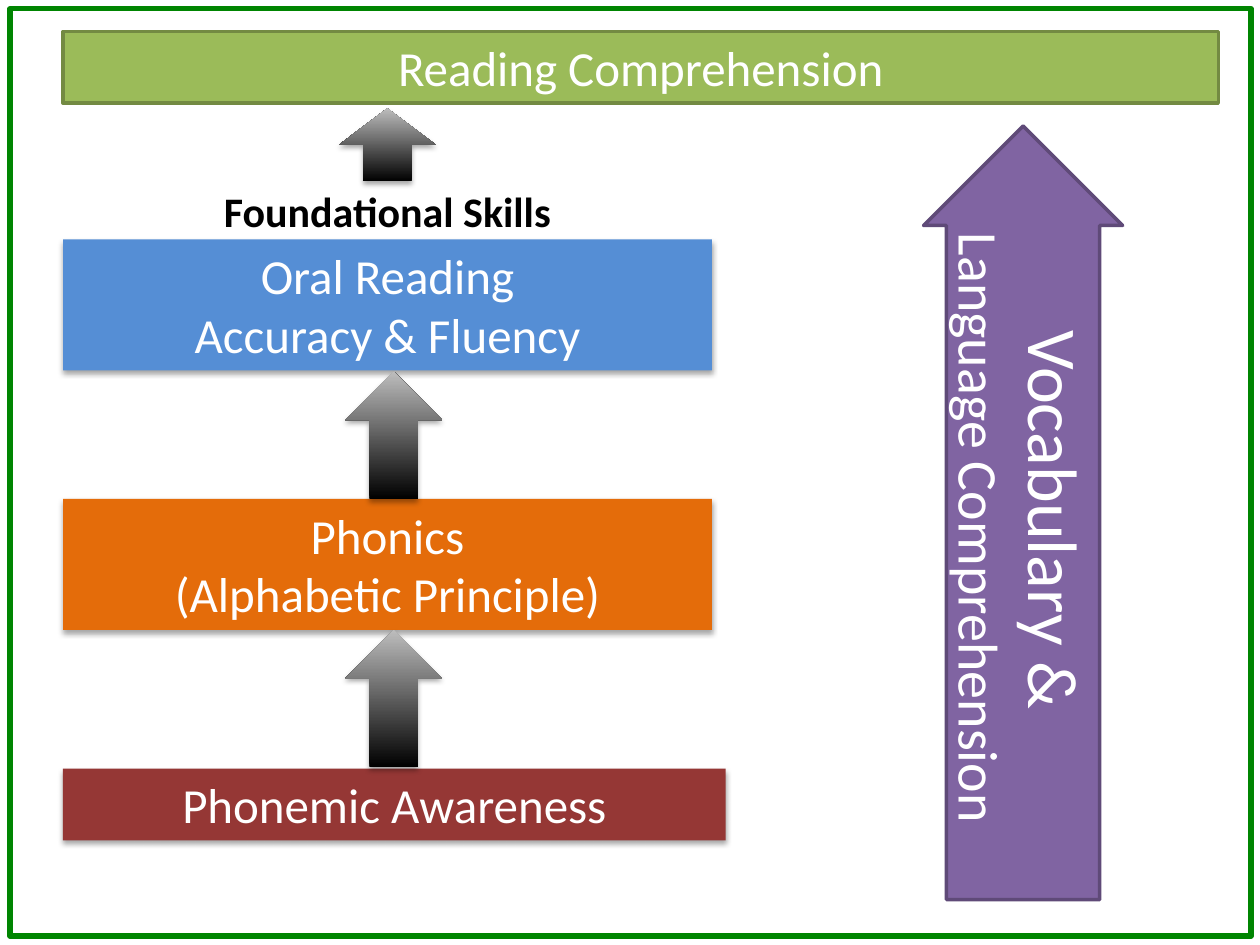
from lxml.etree import SubElement
from pptx import Presentation
from pptx.dml.color import RGBColor
from pptx.enum.shapes import MSO_SHAPE as Preset
from pptx.enum.text import MSO_ANCHOR as Anchor, MSO_AUTO_SIZE as AutoSize, PP_ALIGN as Align
from pptx.oxml.ns import qn
from pptx.util import Inches, Pt

COLUMNS, ROWS = 100, 75


def color(value):
    return RGBColor.from_string(value)


class SlideBuilder:
    font = {"name": "Calibri", "size": Pt(28), "bold": False}
    shadow = {"blurRad": Pt(3.1), "dist": Pt(1.8), "dir": 5400000, "rotWithShape": 0}

    def __init__(self, deck):
        self.width, self.height = deck.slide_width, deck.slide_height
        self.page = deck.slides.add_slide(deck.slide_layouts[6])

    def place(self, left, top, width, height):
        return (
            round(left * self.width / COLUMNS),
            round(top * self.height / ROWS),
            round(width * self.width / COLUMNS),
            round(height * self.height / ROWS),
        )

    def shape(self, preset, area, fill=None, line=None, weight=2, shaded=False):
        shape = self.page.shapes.add_shape(preset, *self.place(*area))
        shape.shadow.inherit = False
        if fill:
            shape.fill.solid()
            shape.fill.fore_color.rgb = color(fill)
        else:
            shape.fill.background()
        if line:
            shape.line.color.rgb = color(line)
            shape.line.width = Pt(weight)
        else:
            shape.line.fill.background()
        if shaded:
            self.add_shadow(shape)
        return shape

    def add_shadow(self, shape):
        effects = shape._element.spPr.find(qn("a:effectLst"))
        outer = SubElement(effects, qn("a:outerShdw"))
        for name, value in self.shadow.items():
            outer.set(name, str(int(value)))
        tint = SubElement(outer, qn("a:srgbClr"), val="000000")
        SubElement(tint, qn("a:alpha"), val="35000")

    def add_text(self, box, lines, ink="FFFFFF", frame_format=None, sizes=(), **font):
        frame = box.text_frame
        settings = {"word_wrap": True, "vertical_anchor": Anchor.TOP,
                    "auto_size": AutoSize.SHAPE_TO_FIT_TEXT, **(frame_format or {})}
        for name, value in settings.items():
            setattr(frame, name, value)
        for index, line in enumerate(lines):
            para = frame.add_paragraph() if index else frame.paragraphs[0]
            para.alignment = Align.CENTER
            span = para.add_run()
            span.text = line
            for name, value in {**self.font, **font}.items():
                setattr(span.font, name, value)
            if sizes:
                span.font.size = Pt(sizes[index])
            span.font.color.rgb = color(ink)

    def block(self, area, lines, fill, **look):
        self.add_text(self.shape(Preset.RECTANGLE, area, fill, **look), lines)

    def label(self, area, text):
        box = self.page.shapes.add_textbox(*self.place(*area))
        self.add_text(box, [text], ink="000000", size=Pt(24), bold=True)

    def step_arrow(self, left, top, height):
        arrow = self.shape(Preset.UP_ARROW, (left, top, 7.7, height), shaded=True)
        arrow.fill.gradient()
        arrow.fill.gradient_angle = 90
        for stop, value in zip(arrow.fill.gradient_stops, ("000000", "BDBDBD")):
            stop.color.rgb = color(value)

    def side_arrow(self, area, lines, sizes, fill, line):
        arrow = self.shape(Preset.UP_ARROW, area, fill, line)
        arrow.adjustments[0], arrow.adjustments[1] = 0.77, 0.5
        layout = {
            "word_wrap": False, "vertical_anchor": Anchor.MIDDLE, "auto_size": AutoSize.NONE,
            "margin_left": Inches(0.1), "margin_top": Inches(0.03),
            "margin_right": Inches(0.1), "margin_bottom": Inches(0.4),
        }
        self.add_text(arrow, lines, frame_format=layout, sizes=sizes)
        arrow.text_frame._txBody.bodyPr.set("vert", "vert")


def main():
    deck = Presentation()
    deck.slide_width, deck.slide_height = Inches(10), Inches(7.5)
    slide = SlideBuilder(deck)
    slide.shape(Preset.RECTANGLE, (0.8, 0.7, 98.5, 73.6), line="008501", weight=3)

    skills = [
        (61, 52.6, 5.7, ["Phonemic Awareness"], "953735"),
        (39.6, 51.5, 10.4, ["Phonics", "(Alphabetic Principle)"], "E46C0A"),
        (19, 51.5, 10.4, ["Oral Reading", "Accuracy & Fluency"], "558ED5"),
    ]
    for top, width, height, lines, fill in skills:
        slide.block((5, top, width, height), lines, fill, shaded=True)
    slide.label((5, 14.2, 51.5, 5), "Foundational Skills")
    slide.block((5, 2.5, 91.7, 5.7), ["Reading Comprehension"], "9BBB59", line="738A42")

    for left, top, height in [(27.4, 29.5, 10.1), (27.4, 50, 10.9), (26.9, 8.6, 5.8)]:
        slide.step_arrow(left, top, height)
    slide.side_arrow((73.3, 10, 15.8, 61.4), ["Vocabulary & ", "Language Comprehension"],
                     (40, 32), "8064A2", "5F4A78")
    deck.save("out.pptx")


if __name__ == "__main__":
    main()
